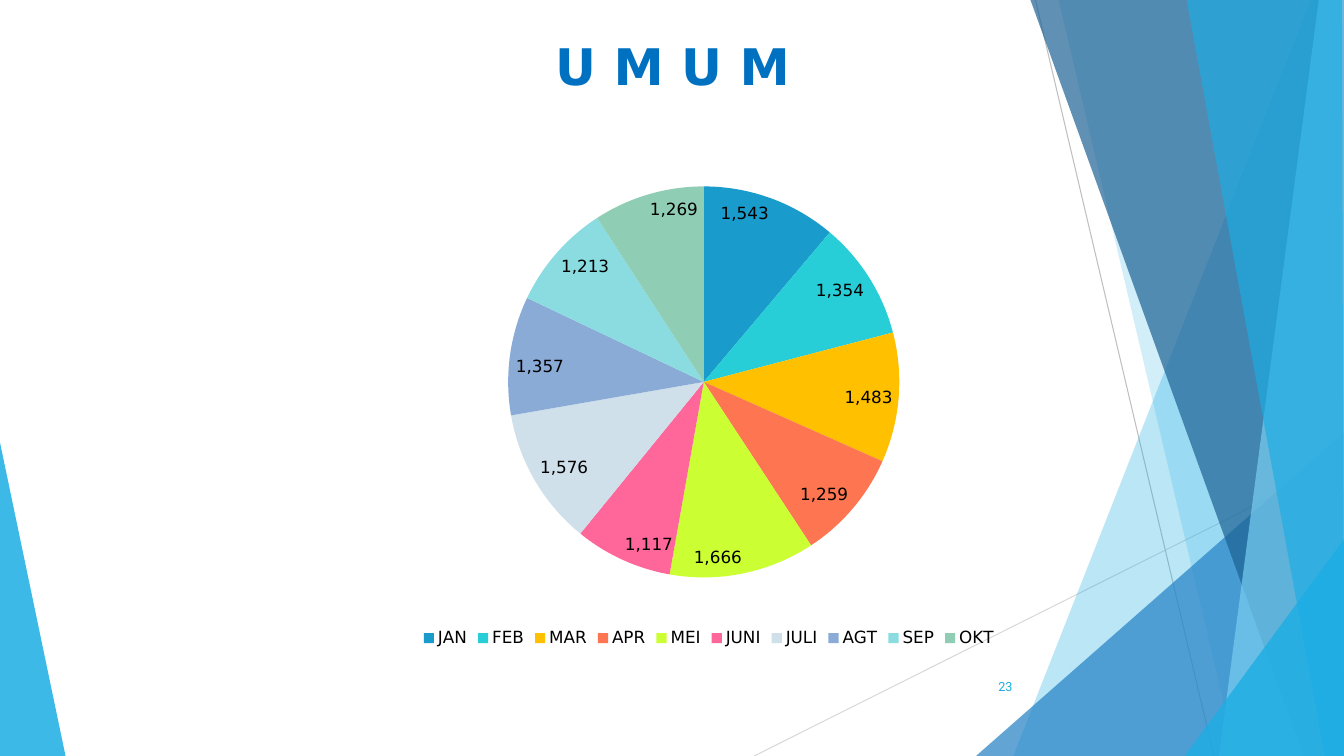
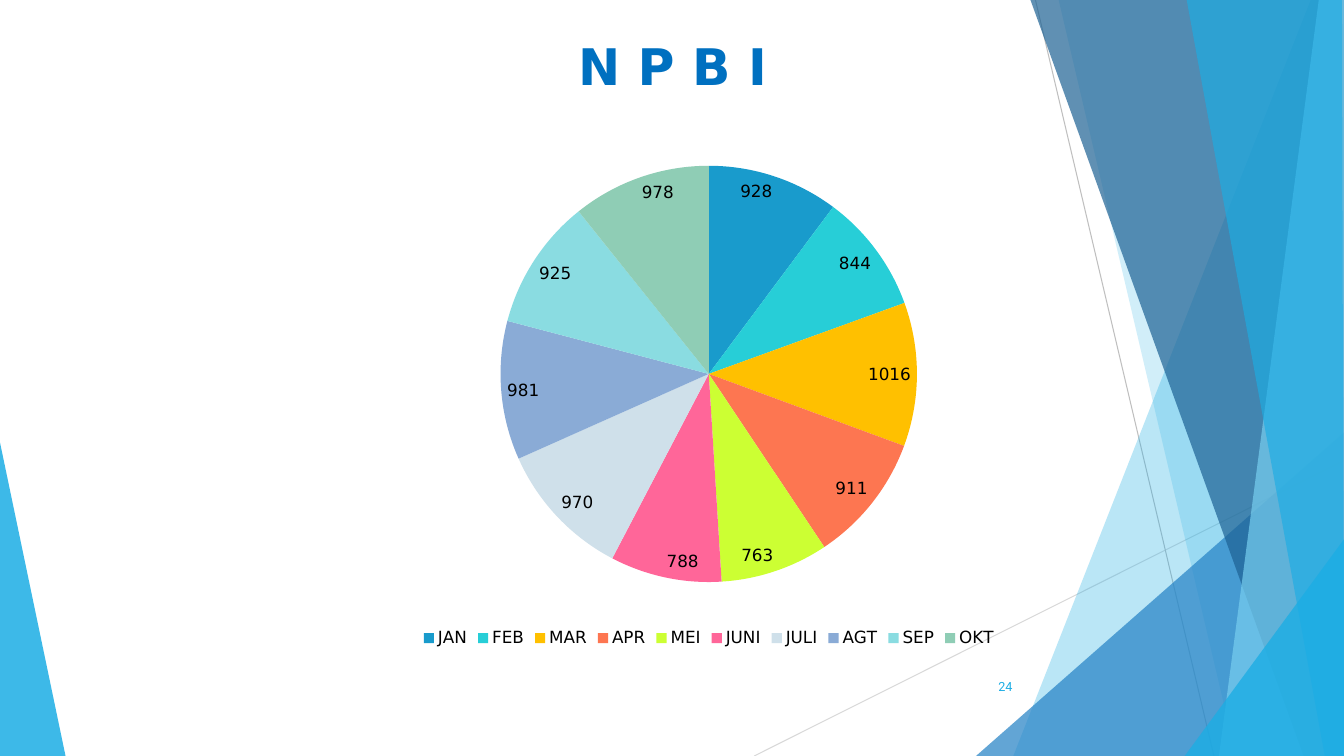
from dataclasses import dataclass

from lxml.etree import SubElement
from pptx import Presentation
from pptx.chart.data import CategoryChartData
from pptx.dml.color import RGBColor
from pptx.enum.chart import XL_CHART_TYPE, XL_LABEL_POSITION, XL_LEGEND_POSITION
from pptx.enum.shapes import MSO_CONNECTOR
from pptx.enum.text import MSO_ANCHOR, PP_ALIGN
from pptx.oxml import parse_xml
from pptx.oxml.ns import nsdecls, qn
from pptx.util import Inches, Pt


@dataclass(frozen=True)
class Theme:
    width: float = 13.33
    height: float = 7.5
    title_font: str = "DejaVu Sans"
    number_font: str = "Roboto"
    title_size: int = 36
    chart_size: int = 12
    number_size: int = 9
    title_color: str = "0070C0"
    text_color: str = "000000"
    sky: str = "1CADE4"
    blue: str = "2683C6"
    navy: str = "1D6294"
    pale: str = "77CEEF"
    rule: str = "BFBFBF"
    light_rule: str = "D9D9D9"
    slices: tuple = ("199BCC", "27CED7", "FFC000", "FD7651", "CCFF33",
                     "FF6699", "CFE0EA", "8AABD6", "8ADCE1", "8FCDB5")


THEME = Theme()
RIGHT, BOTTOM = THEME.width, THEME.height
MONTHS = ("JAN", "FEB", "MAR", "APR", "MEI", "JUNI", "JULI", "AGT", "SEP", "OKT")
CHART_BOX = (1.03, 1.51, 12, 4.96)

# Background art, back to front: colour, opacity in percent, corners
LEFT_FACET = (THEME.sky, 85, [(0, 4.39), (0.65, BOTTOM), (0, BOTTOM)])
RULES = [
    (THEME.light_rule, (7.48, BOTTOM), (RIGHT, 4.57)),
    (THEME.rule, (10.27, 0), (12.04, BOTTOM)),
]
RIGHT_FACETS = [
    (THEME.sky, 30, [(13, 0), (10.05, BOTTOM), (RIGHT, BOTTOM), (RIGHT, 0)]),
    (THEME.sky, 20, [(10.5, 0), (12.26, BOTTOM), (RIGHT, BOTTOM), (RIGHT, 0)]),
    (THEME.blue, 72, [(9.68, BOTTOM), (RIGHT, 4.29), (RIGHT, BOTTOM)]),
    (THEME.navy, 70, [(10.22, 0), (12.93, BOTTOM), (RIGHT, BOTTOM), (RIGHT, 0)]),
    (THEME.pale, 70, [(13.08, 0), (12.09, BOTTOM), (RIGHT, BOTTOM), (RIGHT, 0)]),
    (THEME.sky, 65, [(11.77, 0), (13.14, BOTTOM), (RIGHT, BOTTOM), (13.31, 0)]),
    (THEME.sky, 80, [(11.75, BOTTOM), (RIGHT, 5.35), (RIGHT, BOTTOM)]),
]

# Title, page number, number format, pie centre and diameter, monthly values
PAGES = [
    ("U M U M", 23, "#,##0", (6.98, 3.79), 3.88,
     (1543, 1354, 1483, 1259, 1666, 1117, 1576, 1357, 1213, 1269)),
    ("N P B I", 24, "General", (7.03, 3.71), 4.13,
     (928, 844, 1016, 911, 763, 788, 970, 981, 925, 978)),
]


def style_font(font, name, size, color, bold=False):
    font.name = name
    font.size = Pt(size)
    font.bold = bold
    font.color.rgb = RGBColor.from_string(color)


def add_facet(page, color, opacity, corners):
    points = [(Inches(x), Inches(y)) for x, y in corners]
    builder = page.shapes.build_freeform(*points[0])
    builder.add_line_segments(points[1:], close=True)
    facet = builder.convert_to_shape()
    facet.shadow.inherit = False
    facet.line.fill.background()
    facet.fill.solid()
    facet.fill.fore_color.rgb = RGBColor.from_string(color)
    color_node = facet.fill._xPr.find(f".//{qn('a:srgbClr')}")
    SubElement(color_node, qn("a:alpha"), val=str(opacity * 1000))


def add_rule(page, color, start, end):
    rule = page.shapes.add_connector(
        MSO_CONNECTOR.STRAIGHT, *(Inches(value) for value in start + end))
    rule.line.color.rgb = RGBColor.from_string(color)
    rule.line.width = Pt(0.75)
    SubElement(rule._element.spPr, qn("a:effectLst"))


def add_background(page):
    add_facet(page, *LEFT_FACET)
    for rule in RULES:
        add_rule(page, *rule)
    for facet in RIGHT_FACETS:
        add_facet(page, *facet)


def add_text(page, place, text, align, anchor, **font_style):
    box = page.shapes.add_textbox(*(Inches(value) for value in place))
    frame = box.text_frame
    frame.word_wrap = True
    frame.vertical_anchor = anchor
    para = frame.paragraphs[0]
    para.text = text
    para.alignment = align
    style_font(para.font, **font_style)


def place_pie(chart, center, diameter):
    """Fix the pie inside the chart box, as fractions of that box."""
    left, top, width, height = CHART_BOX
    fractions = {
        "x": (center[0] - diameter / 2 - left) / width,
        "y": (center[1] - diameter / 2 - top) / height,
        "w": diameter / width,
        "h": diameter / height,
    }
    sizes = "".join(f'<c:{key} val="{value:.4f}"/>' for key, value in fractions.items())
    plot_area = chart._chartSpace.chart.plotArea
    for layout in plot_area.findall(qn("c:layout")):
        plot_area.remove(layout)
    plot_area.insert(0, parse_xml(
        f'<c:layout {nsdecls("c")}><c:manualLayout><c:layoutTarget val="inner"/>'
        f'<c:xMode val="edge"/><c:yMode val="edge"/>{sizes}'
        '</c:manualLayout></c:layout>'))


def add_pie(page, values, number_format, center, diameter):
    data = CategoryChartData(number_format=number_format)
    data.categories = MONTHS
    data.add_series("Series 1", values)
    chart = page.shapes.add_chart(
        XL_CHART_TYPE.PIE, *(Inches(value) for value in CHART_BOX), data).chart
    chart.has_title = False
    style_font(chart.font, THEME.title_font, THEME.chart_size, THEME.text_color)
    place_pie(chart, center, diameter)

    chart.has_legend = True
    chart.legend.position = XL_LEGEND_POSITION.BOTTOM
    chart.legend.include_in_layout = False

    # One colour per month
    plot = chart.plots[0]
    plot.vary_by_categories = True
    for index, color in enumerate(THEME.slices):
        fill = plot.series[0].points[index].format.fill
        fill.solid()
        fill.fore_color.rgb = RGBColor.from_string(color)

    plot.has_data_labels = True
    labels = plot.data_labels
    labels.show_value = True
    labels.show_percentage = False
    labels.number_format = number_format
    labels.number_format_is_linked = False
    labels.position = XL_LABEL_POSITION.INSIDE_END
    style_font(labels.font, THEME.title_font, THEME.chart_size, THEME.text_color)


def add_page(deck, title, number, number_format, center, diameter, values):
    page = deck.slides.add_slide(deck.slide_layouts[6])
    add_background(page)
    add_text(page, (0.67, 0.3, 12, 1.25), title, PP_ALIGN.CENTER, MSO_ANCHOR.TOP,
             name=THEME.title_font, size=THEME.title_size,
             color=THEME.title_color, bold=True)
    add_pie(page, values, number_format, center, diameter)
    add_text(page, (9.39, 6.61, 0.75, 0.4), str(number), PP_ALIGN.RIGHT,
             MSO_ANCHOR.MIDDLE, name=THEME.number_font,
             size=THEME.number_size, color=THEME.sky)


def main():
    deck = Presentation()
    deck.slide_width = Inches(THEME.width)
    deck.slide_height = Inches(THEME.height)
    for content in PAGES:
        add_page(deck, *content)
    deck.save("out.pptx")


if __name__ == "__main__":
    main()
